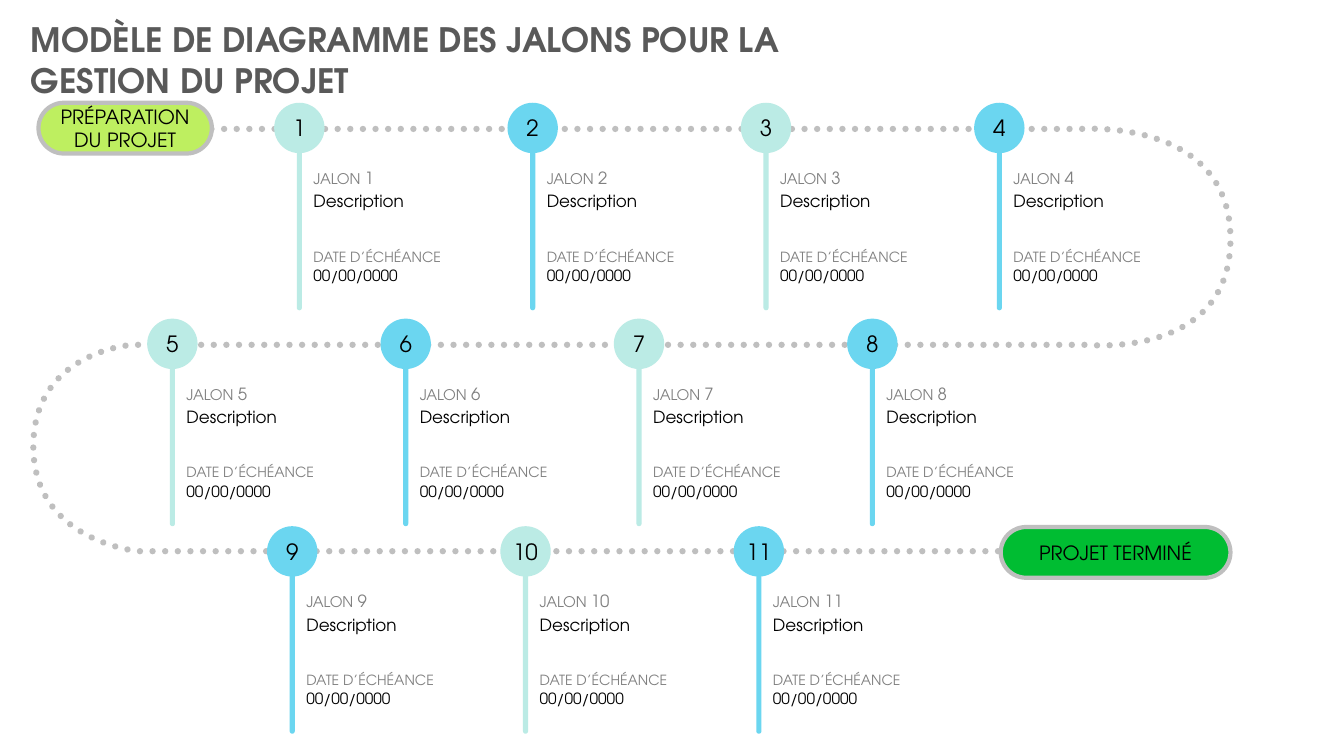
import itertools

import pptx
import pptx.dml.color
import pptx.enum.dml
import pptx.enum.shapes
import pptx.enum.text
import pptx.oxml
import pptx.oxml.ns
import pptx.util

Cm = pptx.util.Cm
Pt = pptx.util.Pt
RGBColor = pptx.dml.color.RGBColor
MSO_SHAPE = pptx.enum.shapes.MSO_SHAPE
PP_ALIGN = pptx.enum.text.PP_ALIGN
MSO_ANCHOR = pptx.enum.text.MSO_ANCHOR

BLACK = RGBColor(0x00, 0x00, 0x00)
DARK_GREY = RGBColor(0x59, 0x59, 0x59)
GREY = RGBColor(0x80, 0x80, 0x80)
LIGHT_GREY = RGBColor(0xBF, 0xBF, 0xBF)
AQUA = RGBColor(0xBB, 0xEB, 0xE5)
BLUE = RGBColor(0x6B, 0xD6, 0xF0)
LIME = RGBColor(0xBE, 0xEF, 0x60)
GREEN = RGBColor(0x00, 0xBD, 0x32)

FONT = "TeX Gyre Adventor"
NO_MARGINS = {
    "margin_left": 0,
    "margin_top": 0,
    "margin_right": 0,
    "margin_bottom": 0,
    "word_wrap": True,
}
CENTRED = {**NO_MARGINS, "vertical_anchor": MSO_ANCHOR.MIDDLE}

PITCH = 5.88
DISC = 1.27
ROWS = (
    (6.91, 2.59, (1, 2, 3, 4), (AQUA, BLUE)),
    (3.71, 8.03, (5, 6, 7, 8), (AQUA, BLUE)),
    (6.73, 13.26, (9, 10, 11), (BLUE, AQUA)),
)

ROUTE_START = (5.33, 3.25)
ROUTE = (
    ((27.25, 3.25),),
    ((27.25, 3.25), (31.01, 2.97), (31.01, 6.02)),
    ((31.01, 9.07), (27.38, 8.69), (27.38, 8.69)),
    ((3.33, 8.69),),
    ((3.33, 8.69), (0.84, 8.86), (0.84, 11.25)),
    ((0.84, 13.64), (3.48, 13.89), (3.48, 13.89)),
    ((26.11, 13.89),),
)


def set_values(target, values):
    for key, value in values.items():
        setattr(target, key, value)


def write(frame, runs, color, frame_values, paragraph_values=None, bold=False):
    set_values(frame, frame_values)
    paragraph = frame.paragraphs[0]
    set_values(paragraph, paragraph_values or {})
    for words, size in runs:
        run = paragraph.add_run()
        run.text = words
        set_values(run.font, {"name": FONT, "size": Pt(size), "bold": bold})
        run.font.color.rgb = color


def add_text(shapes, box, runs, color, frame_values=NO_MARGINS, **options):
    frame = shapes.add_textbox(*map(Cm, box)).text_frame
    write(frame, runs, color, frame_values, **options)


def add_solid(shapes, kind, box, fill, outlined=False):
    solid = shapes.add_shape(kind, *map(Cm, box))
    solid.shadow.inherit = False
    solid.fill.solid()
    solid.fill.fore_color.rgb = fill
    if kind == MSO_SHAPE.ROUNDED_RECTANGLE:
        solid.adjustments[0] = 0.5
    if outlined:
        solid.line.color.rgb = LIGHT_GREY
        solid.line.width = Pt(3)
    else:
        solid.line.fill.background()
    return solid


def add_label(solid, words, size):
    write(solid.text_frame, [(words, size)], BLACK, CENTRED,
          {"alignment": PP_ALIGN.CENTER})


def add_stage(shapes, box, fill, words):
    stage = add_solid(shapes, MSO_SHAPE.ROUNDED_RECTANGLE, box, fill, True)
    add_label(stage, words, 14)


def add_milestone(slide, number, left, top, color):
    shapes = slide.shapes.add_group_shape().shapes
    add_solid(shapes, MSO_SHAPE.ROUNDED_RECTANGLE,
              (left + 0.57, top + 0.48, 0.13, 4.75), color)
    details = (
        (1.63, 2.97, 0.66, [("JALON", 10.5), (" ", 11), (str(number), 12)], GREY),
        (2.22, 3.48, 1.45, [("Description", 12)], BLACK),
        (3.66, 3.53, 0.58, [("DATE D’ÉCHÉANCE", 10)], GREY),
        (4.11, 2.29, 0.66, [("00/00/0000", 11)], BLACK),
    )
    for drop, width, height, runs, ink in details:
        add_text(shapes, (left + 0.99, top + drop, width, height), runs, ink)
    disc = add_solid(shapes, MSO_SHAPE.OVAL, (left, top, DISC, DISC), color)
    add_label(disc, str(number), 16)


def add_route(slide):
    builder = slide.shapes.build_freeform(*map(Cm, ROUTE_START))
    points = itertools.chain.from_iterable(ROUTE)
    builder.add_line_segments([(Cm(x), Cm(y)) for x, y in points], close=False)
    route = builder.convert_to_shape()
    steps = iter(route._element.xpath(".//a:lnTo"))
    for section in ROUTE:
        section_steps = list(itertools.islice(steps, len(section)))
        if len(section) == 3:
            curve = pptx.oxml.parse_xml(
                f"<a:cubicBezTo {pptx.oxml.ns.nsdecls('a')}/>")
            section_steps[0].addprevious(curve)
            for step in section_steps:
                curve.append(step[0])
                step.getparent().remove(step)
    route.shadow.inherit = False
    route.fill.background()
    route.line.color.rgb = LIGHT_GREY
    set_values(route.line, {
        "width": Pt(4.5),
        "dash_style": pptx.enum.dml.MSO_LINE.ROUND_DOT,
    })
    route.line._get_or_add_ln().set("cap", "rnd")


def main():
    deck = pptx.Presentation()
    set_values(deck, {"slide_width": Cm(33.87), "slide_height": Cm(19.05)})
    slide = deck.slides.add_slide(deck.slide_layouts[6])
    title = "MODÈLE DE DIAGRAMME DES JALONS POUR LA GESTION DU PROJET"
    add_text(slide.shapes, (0.53, 0.36, 20.55, 2.31), [(title, 24)], DARK_GREY,
             {"word_wrap": True}, bold=True)
    add_route(slide)
    add_stage(slide.shapes, (0.97, 2.59, 4.37, 1.28), LIME, "PRÉPARATION DU PROJET")
    for left, top, numbers, colors in ROWS:
        for column, (number, color) in enumerate(zip(numbers, itertools.cycle(colors))):
            add_milestone(slide, number, left + column * PITCH, top, color)
    add_stage(slide.shapes, (25.22, 13.28, 5.79, 1.28), GREEN, "PROJET TERMINÉ")
    deck.save("out.pptx")


if __name__ == "__main__":
    main()
